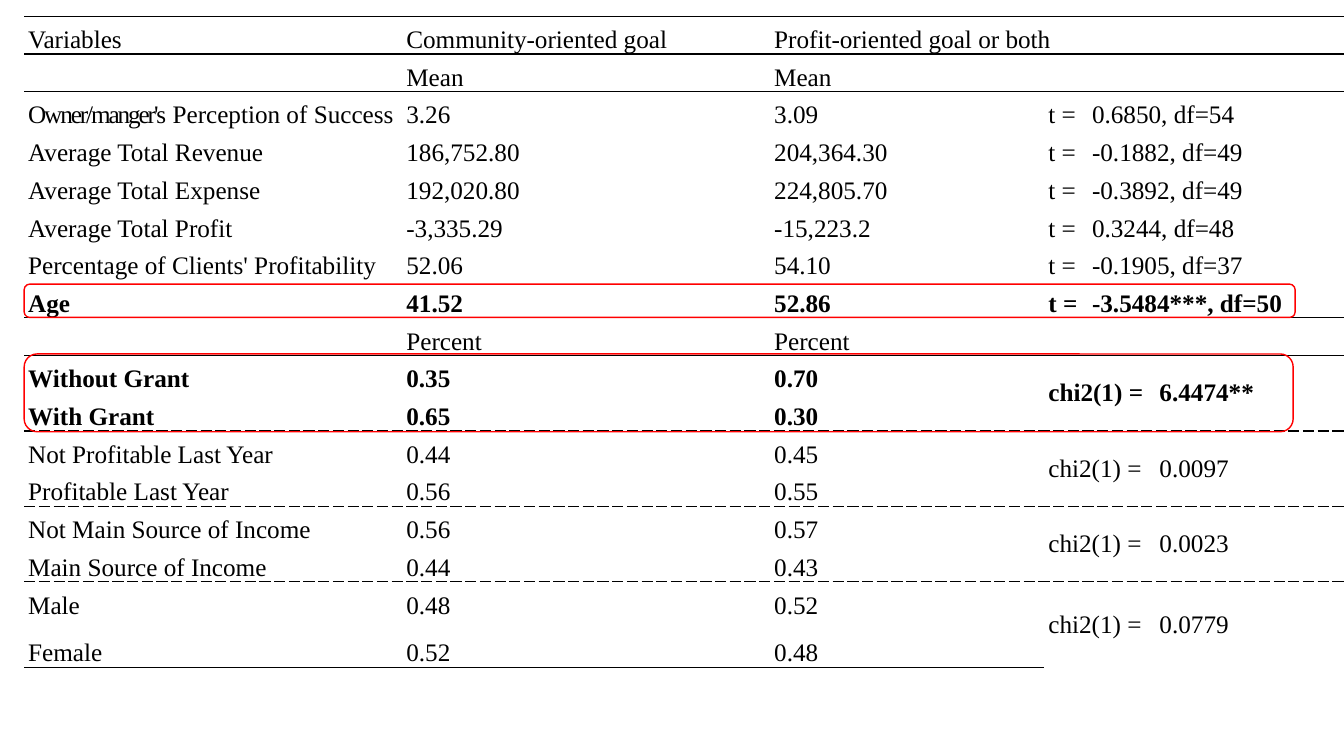
from dataclasses import dataclass

from lxml import etree
from pptx import Presentation
from pptx import util as u
from pptx.dml.color import RGBColor
from pptx.enum import shapes, text
from pptx.oxml import ns


@dataclass(frozen=True)
class Theme:
    font: str = "Times New Roman"
    size: int = 18
    ink: str = "000000"
    highlight: str = "FF0000"
    line: int = 1


THEME = Theme()

# Table geometry, in centimetres
LEFT, TOP = 0.61, 0.41
COL_WIDTHS = (9.53, 9.27, 6.91, 0.64, 6.93)
ROW_HEIGHT, LAST_HEIGHT = 0.95, 1.2

# Variable, community-oriented, profit-oriented, test label, test value
ROWS = (
    ("Variables", "Community-oriented goal", "Profit-oriented goal or both", "", ""),
    ("", "Mean", "Mean", "", ""),
    ("Owner/manger's Perception of Success", "3.26", "3.09", "t =", "0.6850, df=54"),
    ("Average Total Revenue", "186,752.80", "204,364.30", "t =", "-0.1882, df=49"),
    ("Average Total Expense", "192,020.80", "224,805.70", "t =", "-0.3892, df=49"),
    ("Average Total Profit", "-3,335.29", "-15,223.2", "t =", "0.3244, df=48"),
    ("Percentage of Clients' Profitability", "52.06", "54.10", "t =", "-0.1905, df=37"),
    ("Age", "41.52", "52.86", "t =", "-3.5484***, df=50"),
    ("", "Percent", "Percent", "", ""),
    ("Without Grant", "0.35", "0.70", "chi2(1) =", "6.4474**"),
    ("With Grant", "0.65", "0.30", "", ""),
    ("Not Profitable Last Year", "0.44", "0.45", "chi2(1) =", "0.0097"),
    ("Profitable Last Year", "0.56", "0.55", "", ""),
    ("Not Main Source of Income", "0.56", "0.57", "chi2(1) =", "0.0023"),
    ("Main Source of Income", "0.44", "0.43", "", ""),
    ("Male", "0.48", "0.52", "chi2(1) =", "0.0779"),
    ("Female", "0.52", "0.48", "", ""),
)
BOLD_ROWS = {"Age", "Without Grant", "With Grant"}
TIGHT_WORD = "Owner/manger's"
VALUE_TABS = {"t =": 1.1, "chi2(1) =": 2.8}
FIRST_PAIR = 9

# Rule under each row; -1 is the rule above the table
RULES = {-1: "solid", 0: "solid", 1: "solid", 7: "solid", 8: "solid",
         10: "dash", 12: "dash", 14: "dash", 16: "solid"}


def add_run(p, words, bold=False, spacing=None):
    r = p.add_run()
    r.text = words
    r.font.name = THEME.font
    r.font.size = u.Pt(THEME.size)
    r.font.bold = bold
    r.font.color.rgb = RGBColor.from_string(THEME.ink)
    if spacing is not None:
        r.font._element.set("spc", str(spacing))


def add_tab_stop(p, position):
    tabs = etree.SubElement(p._p.get_or_add_pPr(), ns.qn("a:tabLst"))
    etree.SubElement(tabs, ns.qn("a:tab"), pos=str(u.Cm(position)), algn="l")


def set_border(cell, side, dash=None):
    ln = etree.SubElement(cell._tc.get_or_add_tcPr(), ns.qn(f"a:ln{side}"),
                          w=str(u.Pt(THEME.line)))
    if dash is None:
        etree.SubElement(ln, ns.qn("a:noFill"))
        return
    fill = etree.SubElement(ln, ns.qn("a:solidFill"))
    etree.SubElement(fill, ns.qn("a:srgbClr"), val=THEME.ink)
    etree.SubElement(ln, ns.qn("a:prstDash"), val=dash)


def format_cell(cell, row):
    cell.margin_left = cell.margin_right = u.Cm(0.1)
    cell.margin_top = cell.margin_bottom = 0
    cell.vertical_anchor = text.MSO_ANCHOR.BOTTOM
    borders = {"L": None, "R": None, "T": RULES.get(row - 1), "B": RULES.get(row)}
    for side, dash in borders.items():
        set_border(cell, side, dash)
    cell.fill.background()


def fill_row(table, row, values):
    *entries, label, value = values
    bold = entries[0] in BOLD_ROWS
    for col, words in enumerate(entries):
        p = table.cell(row, col).text_frame.paragraphs[0]
        if words.startswith(TIGHT_WORD):
            add_run(p, TIGHT_WORD, bold, spacing=-150)
            words = words.removeprefix(TIGHT_WORD)
        if words:
            add_run(p, words, bold)
    if label:
        p = table.cell(row, 3).text_frame.paragraphs[0]
        add_tab_stop(p, VALUE_TABS[label])
        add_run(p, f"{label}\t{value}", bold)


def merge_cells(table):
    table.cell(0, 2).merge(table.cell(0, 3))
    for row in range(1, FIRST_PAIR):
        table.cell(row, 3).merge(table.cell(row, 4))
    for row in range(FIRST_PAIR, len(ROWS), 2):
        table.cell(row, 3).merge(table.cell(row + 1, 4))
        table.cell(row, 3).vertical_anchor = text.MSO_ANCHOR.MIDDLE


def add_results_table(s):
    heights = [ROW_HEIGHT] * (len(ROWS) - 1) + [LAST_HEIGHT]
    table = s.shapes.add_table(len(ROWS), len(COL_WIDTHS), u.Cm(LEFT), u.Cm(TOP),
                               u.Cm(sum(COL_WIDTHS)), u.Cm(sum(heights))).table
    table.first_row = table.horz_banding = False
    for column, width in zip(table.columns, COL_WIDTHS):
        column.width = u.Cm(width)
    for row, (values, height) in enumerate(zip(ROWS, heights)):
        table.rows[row].height = u.Cm(height)
        for cell in table.rows[row].cells:
            format_cell(cell, row)
        fill_row(table, row, values)
    merge_cells(table)


def add_highlight(s, top, width, height):
    sp = s.shapes.add_shape(shapes.MSO_SHAPE.ROUNDED_RECTANGLE, u.Cm(LEFT),
                            u.Cm(top), u.Cm(width), u.Cm(height))
    sp.shadow.inherit = False
    sp.fill.background()
    sp.line.color.rgb = RGBColor.from_string(THEME.highlight)
    sp.line.width = u.Pt(THEME.line)


def main():
    prs = Presentation()
    prs.slide_width, prs.slide_height = u.Cm(33.87), u.Cm(19.05)
    s = prs.slides.add_slide(prs.slide_layouts[6])

    # Comparison of the two goal groups
    add_results_table(s)

    # Frames around the significant results: age, then grant
    add_highlight(s, 7.16, 32.03, 0.84)
    add_highlight(s, 8.92, 31.98, 1.96)

    prs.save("out.pptx")


if __name__ == "__main__":
    main()
